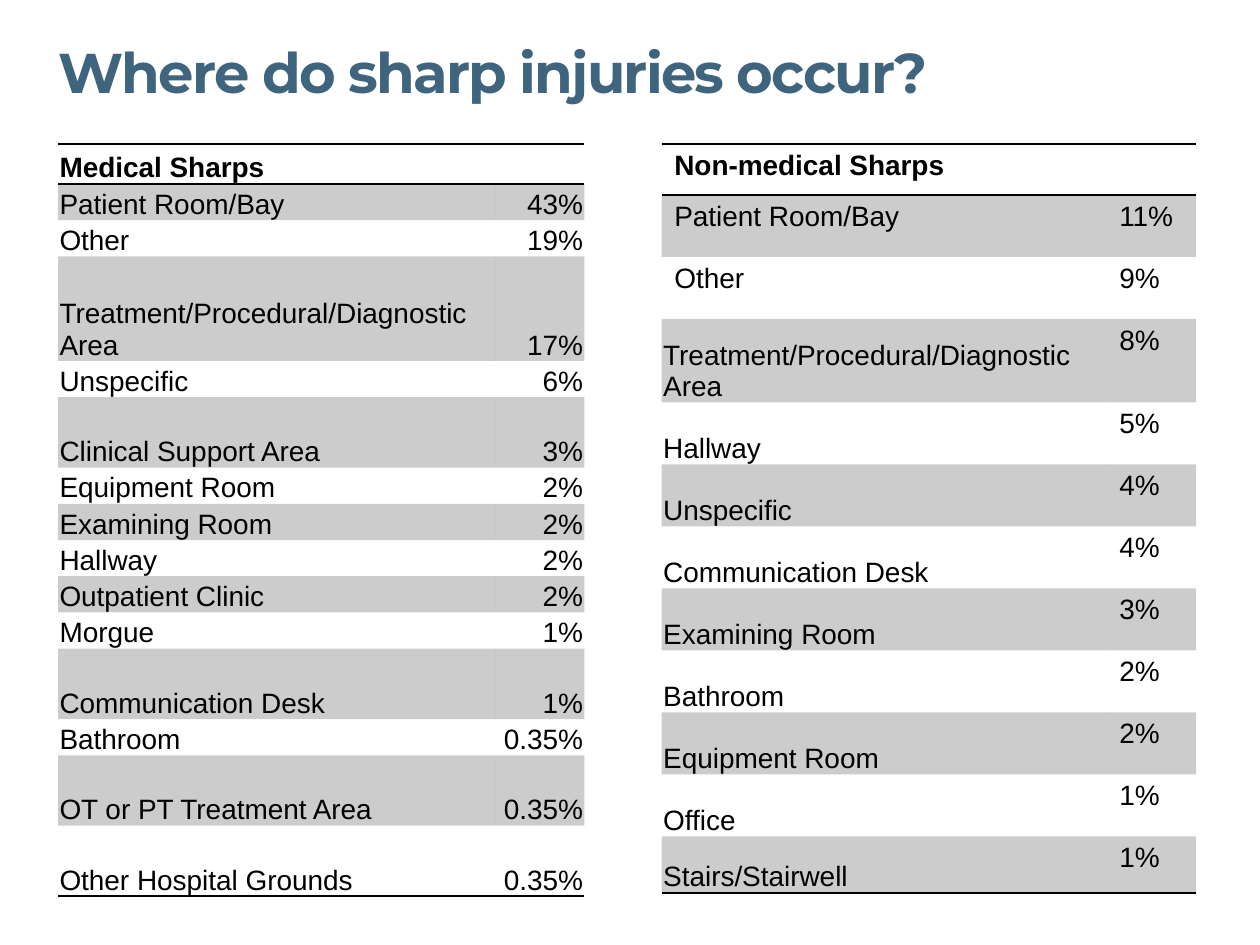
from dataclasses import dataclass

from lxml.etree import SubElement
from pptx import Presentation
from pptx.dml.color import RGBColor
from pptx.enum.text import MSO_ANCHOR, PP_ALIGN
from pptx.oxml.ns import qn
from pptx.util import Cm, Pt


@dataclass(frozen=True)
class Theme:
    title_font: str = "Montserrat"
    table_font: str = "Arial"
    title_size: int = 32
    table_size: int = 16
    title_color: str = "3E647E"
    ink: str = "000000"
    band_opacity: int = 20
    rule_width: int = 1
    plain_table_style: str = "{2D5ABB26-0587-4C30-8999-92F81FD0307C}"


@dataclass(frozen=True)
class SharpsTable:
    """One table; lengths are centimetres, and loose rows keep default margins."""
    heading: str
    left: float
    columns: tuple
    row_height: float
    special_heights: dict
    loose_label_rows: int
    tight_values: bool
    entries: list


THEME = Theme()
TABLE_TOP = 2.9
TREATMENT = "Treatment/Procedural/Diagnostic Area"

TABLES = [
    SharpsTable(
        "Medical Sharps", 1.17, (8.81, 1.8), 0.73,
        {3: 2.11, 5: 1.42, 11: 1.42, 13: 1.42, 14: 1.42}, 0, True,
        [("Patient Room/Bay", "43%"), ("Other", "19%"), (TREATMENT, "17%"),
         ("Unspecific", "6%"), ("Clinical Support Area", "3%"),
         ("Equipment Room", "2%"), ("Examining Room", "2%"), ("Hallway", "2%"),
         ("Outpatient Clinic", "2%"), ("Morgue", "1%"),
         ("Communication Desk", "1%"), ("Bathroom", "0.35%"),
         ("OT or PT Treatment Area", "0.35%"),
         ("Other Hospital Grounds", "0.35%")]),
    SharpsTable(
        "Non-medical Sharps", 13.34, (8.97, 1.8), 1.25,
        {0: 0.99, 3: 1.68, 11: 1.14}, 3, False,
        [("Patient Room/Bay", "11%"), ("Other", "9%"), (TREATMENT, "8%"),
         ("Hallway", "5%"), ("Unspecific", "4%"), ("Communication Desk", "4%"),
         ("Examining Room", "3%"), ("Bathroom", "2%"), ("Equipment Room", "2%"),
         ("Office", "1%"), ("Stairs/Stairwell", "1%")]),
]


def write_text(frame, text: str, *, font: str, size: int, color: str,
               bold: bool = False, align=None, line_spacing=None, tracking=None):
    para = frame.paragraphs[0]
    para.alignment = align
    para.line_spacing = line_spacing
    span = para.add_run()
    span.text = text
    span.font.name = font
    span.font.size = Pt(size)
    span.font.bold = bold
    span.font.color.rgb = RGBColor.from_string(color)
    if tracking is not None:
        span.font._element.set("spc", str(tracking))


def add_rule(cell, side: str) -> None:
    """Draw a border on one side; call before filling, as the schema orders them."""
    properties = cell._tc.get_or_add_tcPr()
    line = SubElement(properties, qn(f"a:ln{side}"), w=str(Pt(THEME.rule_width)))
    SubElement(SubElement(line, qn("a:solidFill")), qn("a:srgbClr"), val=THEME.ink)


def fill_band(cell) -> None:
    cell.fill.solid()
    cell.fill.fore_color.rgb = RGBColor.from_string(THEME.ink)
    color = cell._tc.tcPr.find(f"{qn('a:solidFill')}/{qn('a:srgbClr')}")
    SubElement(color, qn("a:alpha"), val=str(THEME.band_opacity * 1000))


def tighten(cell) -> None:
    cell.vertical_anchor = MSO_ANCHOR.BOTTOM
    cell.margin_left = cell.margin_right = cell.margin_top = Cm(0.03)
    cell.margin_bottom = 0


def draw_table(page, data: SharpsTable) -> None:
    rows = [(data.heading, ""), *data.entries]
    heights = [data.special_heights.get(index, data.row_height)
               for index in range(len(rows))]
    table = page.shapes.add_table(
        len(rows), 2, Cm(data.left), Cm(TABLE_TOP),
        Cm(sum(data.columns)), Cm(sum(heights))).table
    table._tbl.tblPr.find(qn("a:tableStyleId")).text = THEME.plain_table_style
    table.first_row = table.horz_banding = False
    for column, width in zip(table.columns, data.columns):
        column.width = Cm(width)

    for row_index, row in enumerate(rows):
        table.rows[row_index].height = Cm(heights[row_index])
        for column_index, text in enumerate(row):
            cell = table.cell(row_index, column_index)
            is_value = column_index == 1
            if data.tight_values if is_value else row_index >= data.loose_label_rows:
                tighten(cell)
            if row_index == 0:
                add_rule(cell, "T")
            if row_index in (0, len(rows) - 1):
                add_rule(cell, "B")
            if row_index % 2:
                fill_band(cell)
            else:
                cell.fill.background()
            if text:
                write_text(cell.text_frame, text, font=THEME.table_font,
                           size=THEME.table_size, color=THEME.ink,
                           bold=row_index == 0,
                           align=PP_ALIGN.RIGHT if is_value and data.tight_values
                           else PP_ALIGN.LEFT)


def draw_title(page, text: str) -> None:
    box = page.shapes.title
    box.left, box.top, box.width, box.height = Cm(1.17), Cm(0.97), Cm(21.59), Cm(1.22)
    frame = box.text_frame
    frame.margin_left = frame.margin_right = frame.margin_top = frame.margin_bottom = 0
    frame.vertical_anchor = MSO_ANCHOR.TOP
    write_text(frame, text, font=THEME.title_font, size=THEME.title_size,
               color=THEME.title_color, bold=True, align=PP_ALIGN.LEFT,
               line_spacing=0.85, tracking=-100)


def main() -> None:
    deck = Presentation()
    deck.slide_width, deck.slide_height = Cm(25.4), Cm(19.05)
    page = deck.slides.add_slide(deck.slide_layouts.get_by_name("Title Only"))
    draw_title(page, "Where do sharp injuries occur?")
    for data in TABLES:
        draw_table(page, data)
    deck.save("out.pptx")


if __name__ == "__main__":
    main()
